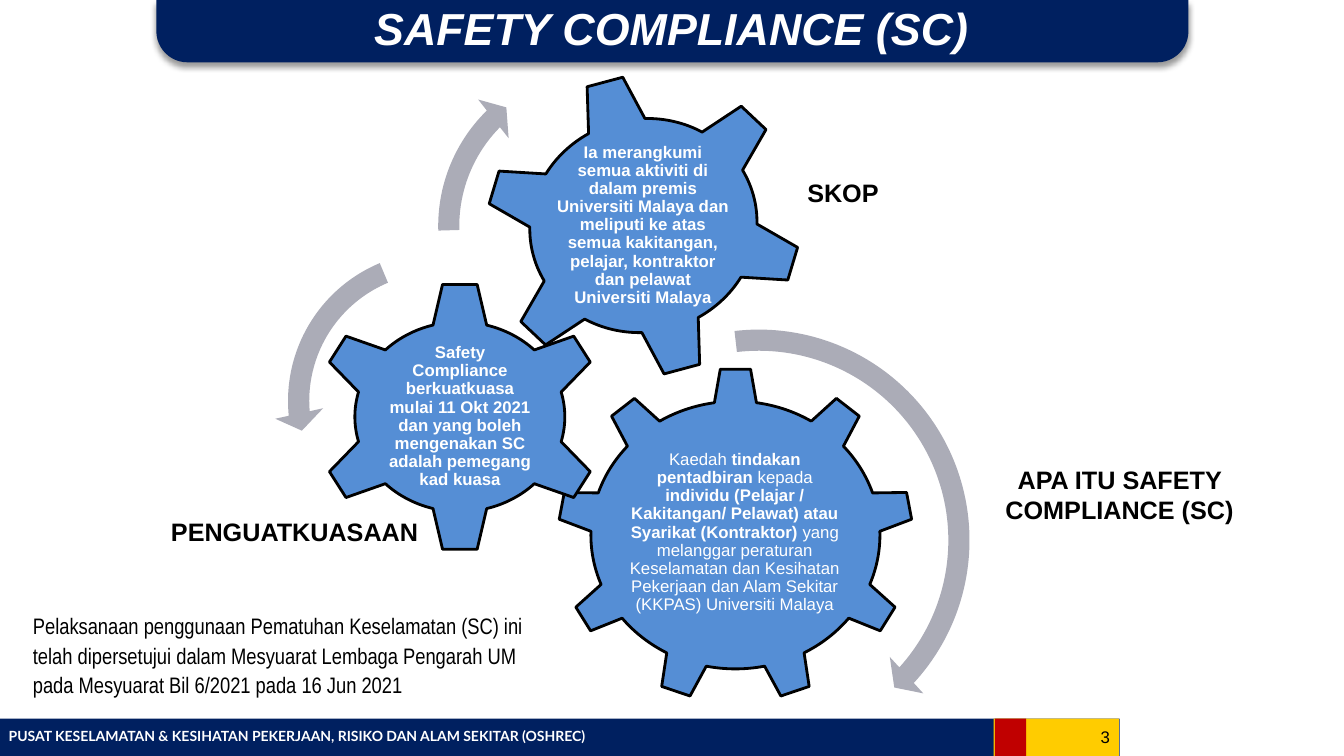
import pptx
import pptx.dml.color
import pptx.enum.shapes
import pptx.enum.text
import pptx.oxml
import pptx.oxml.ns
import pptx.util

Cm = pptx.util.Cm
Pt = pptx.util.Pt
RGBColor = pptx.dml.color.RGBColor
SHAPE = pptx.enum.shapes.MSO_SHAPE
ALIGN = pptx.enum.text.PP_ALIGN
ANCHOR = pptx.enum.text.MSO_ANCHOR

NAVY = RGBColor(0x00, 0x20, 0x60)
YELLOW = RGBColor(0xFF, 0xCC, 0x00)
RED = RGBColor(0xC0, 0x00, 0x00)
BLUE = RGBColor(0x55, 0x8E, 0xD5)
GREY = RGBColor(0xAB, 0xAC, 0xB7)
BLACK = RGBColor(0x00, 0x00, 0x00)
WHITE = RGBColor(0xFF, 0xFF, 0xFF)


def add_shape(s, kind, box, fill, adjustments=(), rotation=0, outline=None):
    sp = s.shapes.add_shape(kind, *[Cm(v) for v in box])
    sp.shadow.inherit = False
    sp.fill.solid()
    sp.fill.fore_color.rgb = fill
    if outline is None:
        sp.line.fill.background()
    else:
        sp.line.color.rgb = outline
        sp.line.width = Pt(2)
    for i, value in enumerate(adjustments):
        sp.adjustments[i] = value
    sp.rotation = rotation
    return sp


def add_shadow(sp):
    effects = sp._element.spPr.find(pptx.oxml.ns.qn("a:effectLst"))
    effects.append(pptx.oxml.parse_xml(
        f'<a:outerShdw {pptx.oxml.ns.nsdecls("a")} blurRad="{Pt(4)}" '
        f'dist="{Pt(3)}" dir="5400000" rotWithShape="0">'
        '<a:srgbClr val="000000"><a:alpha val="40000"/></a:srgbClr>'
        '</a:outerShdw>'))


def add_text(s, box, runs, size, color=BLACK, font="Arial", align=ALIGN.LEFT,
             anchor=ANCHOR.TOP, spacing=None, inset=None, italic=False):
    """Add one paragraph from (text, bold) runs."""
    tf = s.shapes.add_textbox(*[Cm(v) for v in box]).text_frame
    tf.word_wrap = True
    tf.vertical_anchor = anchor
    if inset is not None:
        tf.margin_left = tf.margin_right = Cm(inset)
        tf.margin_top = tf.margin_bottom = Cm(inset)
    p = tf.paragraphs[0]
    p.alignment = align
    if spacing:
        p.line_spacing = spacing
    for text, bold in runs:
        r = p.add_run()
        r.text = text
        r.font.name = font
        r.font.size = Pt(size)
        r.font.bold = bold
        r.font.italic = italic
        r.font.color.rgb = color


def add_gear(s, kind, box, text_box, runs, rotation=0):
    add_shape(s, kind, box, BLUE, rotation=rotation, outline=BLACK)
    add_text(s, text_box, runs, 12, WHITE, align=ALIGN.CENTER,
             anchor=ANCHOR.MIDDLE, spacing=0.9, inset=0.05)


def add_label(s, box, text, align=ALIGN.CENTER):
    add_text(s, box, [(text, True)], 18, align=align)


def main():
    prs = pptx.Presentation()
    prs.slide_width, prs.slide_height = Cm(33.87), Cm(19.05)
    s = prs.slides.add_slide(prs.slide_layouts[6])

    # Title banner
    banner = add_shape(s, SHAPE.ROUND_2_SAME_RECTANGLE, (3.94, 0, 26.01, 1.57),
                       NAVY, (0.5, 0), 180)
    add_shadow(banner)
    add_text(s, (4.72, 0.13, 24.41, 1.14), [("SAFETY COMPLIANCE (SC)", True)],
             32, WHITE, align=ALIGN.CENTER, anchor=ANCHOR.MIDDLE, italic=True)

    # Footer
    for left, width, color in ((0, 28.22, NAVY), (25.04, 3.16, YELLOW),
                               (25.07, 0.79, RED)):
        add_shape(s, SHAPE.RECTANGLE, (left, 18.11, width, 0.94), color)
    add_text(s, (-0.03, 18.21, 23.6, 0.69),
             [("PUSAT KESELAMATAN & KESIHATAN PEKERJAAN, RISIKO DAN ALAM "
               "SEKITAR (OSHREC)", True)], 10, WHITE, "Lato")
    add_text(s, (25.35, 18.11, 2.87, 0.89), [("3", False)], 12,
             align=ALIGN.RIGHT, anchor=ANCHOR.MIDDLE)

    # Gears
    add_gear(s, SHAPE.GEAR_9, (14.05, 9.27, 8.97, 8.43),
             (15.8, 11.25, 5.44, 4.34),
             [("Kaedah ", False), ("tindakan pentadbiran", True),
              (" kepada ", False),
              ("individu (Pelajar / Kakitangan/ Pelawat) atau Syarikat "
               "(Kontraktor) ", True),
              ("yang melanggar peraturan Keselamatan dan Kesihatan Pekerjaan "
               "dan Alam Sekitar (KKPAS) Universiti Malaya", False)])
    add_gear(s, SHAPE.GEAR_6, (7.92, 7.09, 7.34, 6.83),
             (9.73, 8.81, 3.73, 3.38),
             [("Safety Compliance berkuatkuasa mulai 11 Okt 2021 dan yang "
               "boleh mengenakan SC adalah pemegang kad kuasa", True)])
    add_gear(s, SHAPE.GEAR_6, (12.19, 1.85, 8.05, 7.67),
             (13.97, 3.51, 4.47, 4.34),
             [("Ia merangkumi semua aktiviti di dalam premis Universiti "
               "Malaya dan meliputi ke atas semua kakitangan, pelajar, "
               "kontraktor dan pelawat Universiti Malaya", True)], 345)

    # Rotation arrows
    add_shape(s, SHAPE.CIRCULAR_ARROW, (13.46, 7.95, 11.33, 11.33), GREY,
              (0.047, 2.99, 25.445, 158.015, 0.055))
    add_shape(s, SHAPE.LEFT_CIRCULAR_ARROW, (6.91, 5.99, 8.23, 8.23), GREY,
              (0.065, 4.3, 104.891, 148.378, 0.075))
    add_shape(s, SHAPE.CIRCULAR_ARROW, (10.69, 1.27, 8.86, 8.86), GREY,
              (0.06, 3.941, 133.138, 105.082, 0.07), 3.3)

    # Gear labels and approval note
    add_label(s, (24.94, 11.58, 6.55, 1.8), "APA ITU SAFETY COMPLIANCE (SC)")
    add_label(s, (4.06, 12.88, 7.09, 1.02), "PENGUATKUASAAN", ALIGN.LEFT)
    add_label(s, (17.55, 4.34, 7.39, 1.02), "SKOP")
    add_text(s, (0.58, 15.24, 13.51, 2.46),
             [("Pelaksanaan penggunaan Pematuhan Keselamatan (SC) ini telah "
               "dipersetujui dalam Mesyuarat Lembaga Pengarah UM pada "
               "Mesyuarat Bil 6/2021 pada 16 Jun 2021", False)],
             16, font="Arial Narrow", spacing=1.1)

    prs.save("out.pptx")


if __name__ == "__main__":
    main()
